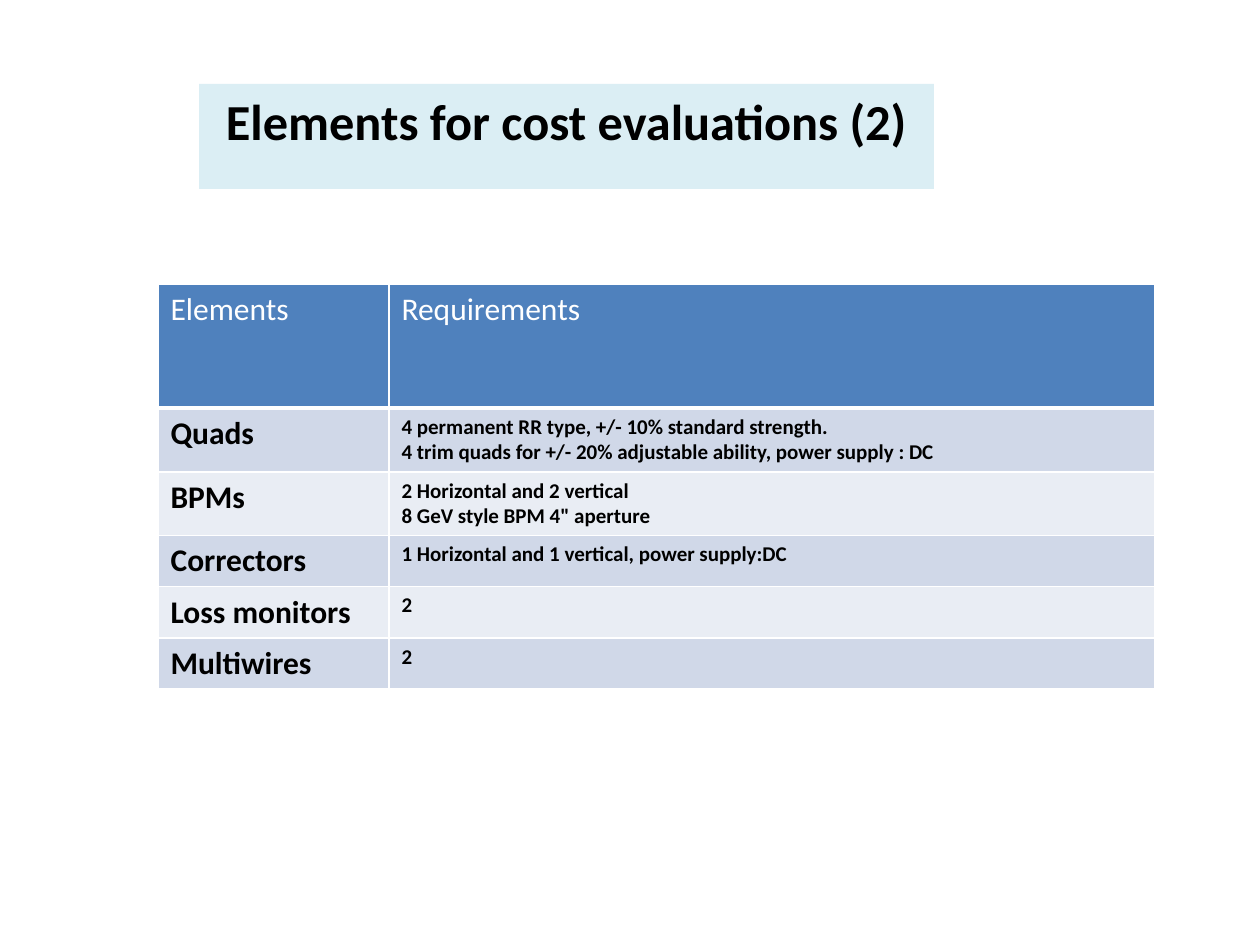
from dataclasses import dataclass

from lxml import etree
from pptx import Presentation
from pptx.dml.color import RGBColor
from pptx.enum.shapes import MSO_SHAPE
from pptx.enum.text import MSO_ANCHOR, PP_ALIGN
from pptx.oxml.ns import qn
from pptx.util import Pt

RECT = MSO_SHAPE.RECTANGLE
TOP = MSO_ANCHOR.TOP
LEFT, CENTER = PP_ALIGN.LEFT, PP_ALIGN.CENTER
SCALE = 914400 / 126
FACE = "Calibri"
BLACK, WHITE = "000000", "FFFFFF"
BLUE, PALE = "4F81BD", "DBEEF4"
BANDS = ("D0D8E8", "E9EDF4")


@dataclass
class Row:
    name: str
    needs: str


HEAD = Row("Elements", "Requirements")
ROWS = [
    Row("Quads", "4 permanent RR type, +/- 10% standard strength.\n"
        "4 trim quads for +/- 20% adjustable ability, power supply : DC"),
    Row("BPMs", "2 Horizontal and 2 vertical\n8 GeV style BPM 4\" aperture"),
    Row("Correctors", "1 Horizontal and 1 vertical, power supply:DC"),
    Row("Loss monitors", "2"),
    Row("Multiwires", "2"),
]


def px(n: int) -> int:
    return round(n * SCALE)


def color(code: str) -> RGBColor:
    return RGBColor.from_string(code)


def paint(item, code: str) -> None:
    item.fill.solid()
    item.fill.fore_color.rgb = color(code)


def write(frame, text: str, size: float, code: str, bold: bool, align=LEFT) -> None:
    frame.text = text
    for para in frame.paragraphs:
        para.alignment = align
        para.font.name = FACE
        para.font.size = Pt(size)
        para.font.bold = bold
        para.font.color.rgb = color(code)


def border(cell, base: int) -> None:
    props = cell._tc.get_or_add_tcPr()
    for side, width in (("L", 1), ("R", 1), ("T", 1), ("B", base)):
        line = etree.SubElement(props, qn(f"a:ln{side}"), w=str(Pt(width)))
        fill = etree.SubElement(line, qn("a:solidFill"))
        etree.SubElement(fill, qn("a:srgbClr"), val=WHITE)


def add_title(slide) -> None:
    box = slide.shapes.add_shape(RECT, px(199), px(84), px(735), px(105))
    box.shadow.inherit = False
    box.line.fill.background()
    paint(box, PALE)
    box.text_frame.vertical_anchor = TOP
    write(box.text_frame, "Elements for cost evaluations (2)", 28.8, BLACK, True, CENTER)


def add_row(table, index: int, row: Row) -> None:
    head = index == 0
    table.rows[index].height = px(124 if head else 51)
    back = BLUE if head else BANDS[(index - 1) % 2]
    ink = WHITE if head else BLACK
    sizes = (18, 18 if head else 12)
    for cell, text, size in zip(table.rows[index].cells, (row.name, row.needs), sizes):
        border(cell, 3 if head else 1)
        paint(cell, back)
        write(cell.text_frame, text, size, ink, not head)


def add_grid(slide) -> None:
    rows = [HEAD, *ROWS]
    frame = slide.shapes.add_table(len(rows), 2, px(158), px(284), px(997), px(404))
    table = frame.table
    for col, width in zip(table.columns, (231, 766)):
        col.width = px(width)
    for index, row in enumerate(rows):
        add_row(table, index, row)
    frame.height = px(404)


def main() -> None:
    deck = Presentation()
    deck.slide_width, deck.slide_height = px(1260), px(945)
    slide = deck.slides.add_slide(deck.slide_layouts[6])
    add_title(slide)
    add_grid(slide)
    deck.save("out.pptx")


if __name__ == "__main__":
    main()
